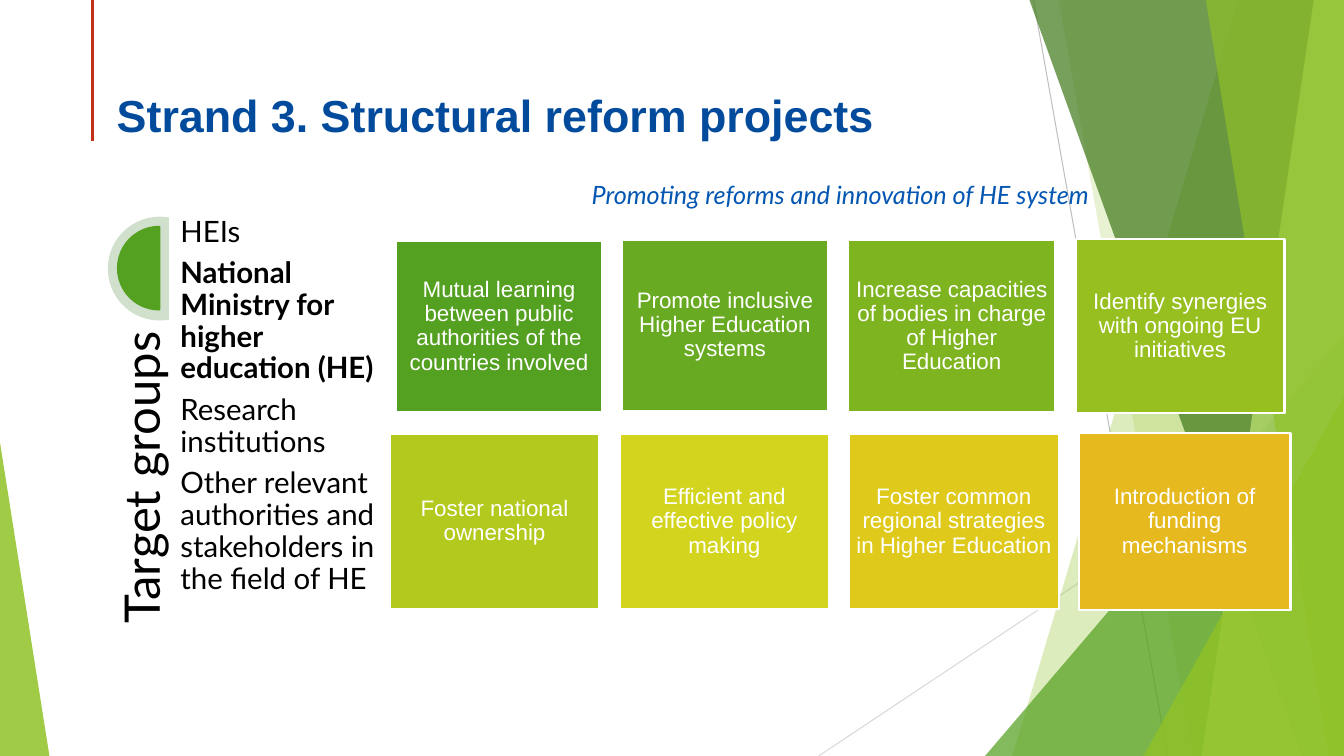
"""Build the slide on structural reform projects."""
from dataclasses import dataclass

from lxml import etree
from pptx import Presentation
from pptx.dml.color import RGBColor
from pptx.enum.shapes import MSO_CONNECTOR, MSO_SHAPE as Preset
from pptx.enum.text import MSO_ANCHOR as Anchor, PP_ALIGN as Align
from pptx.oxml.ns import qn
from pptx.util import Inches, Pt


@dataclass(frozen=True)
class Theme:
    """Colours, fonts and type sizes of the slide."""
    white: str = "FFFFFF"
    black: str = "000000"
    title: str = "024B9C"
    subtitle: str = "0356B1"
    accent: str = "C42F1A"
    lime: str = "90C226"
    green: str = "54A021"
    forest: str = "3F7819"
    pale_lime: str = "C0E474"
    halo: str = "D1DFCD"
    grey: str = "BFBFBF"
    light_grey: str = "D9D9D9"
    heading_font: str = "Arial"
    body_font: str = "Lato"
    title_size: int = 32
    label_size: int = 35
    list_size: int = 21
    subtitle_size: int = 18
    tile_size: int = 16


THEME = Theme()
WIDTH, HEIGHT = 13.33, 7.5

TILES = [
    ("Mutual learning between public authorities of the countries involved",
     "54A021", (3.93, 2.39, 2.04, 1.7)),
    ("Promote inclusive Higher Education systems",
     "68AA21", (6.17, 2.38, 2.04, 1.7)),
    ("Increase capacities of bodies in charge of Higher Education",
     "7EB420", (8.41, 2.38, 2.06, 1.71)),
    ("Identify synergies with ongoing EU initiatives",
     "97BF1F", (10.67, 2.37, 2.07, 1.73)),
    ("Foster national ownership",
     "B3C91E", (3.87, 4.31, 2.07, 1.73)),
    ("Efficient and effective policy making",
     "D2D41D", (6.15, 4.31, 2.07, 1.73)),
    ("Foster common regional strategies in Higher Education",
     "DFCA1C", (8.42, 4.31, 2.08, 1.73)),
    ("Introduction of funding mechanisms",
     "E6B91E", (10.7, 4.3, 2.1, 1.75)),
]

TARGET_GROUPS = [
    ("HEIs", False),
    ("National Ministry for higher education (HE)", True),
    ("Research institutions", False),
    ("Other relevant authorities and stakeholders in the field of HE", False),
]


def rgb(colour):
    """Turn a hex string into a colour."""
    return RGBColor.from_string(colour)


def paint(shape, fill, opacity=100, line=None):
    """Give a shape a flat fill, an optional outline and no shadow."""
    shape.shadow.inherit = False
    shape.fill.solid()
    shape.fill.fore_color.rgb = rgb(fill)
    if opacity < 100:
        colour = shape.fill._xPr.find(qn("a:solidFill"))[0]
        etree.SubElement(colour, qn("a:alpha")).set("val", str(opacity * 1000))
    if line:
        shape.line.color.rgb = rgb(line)
        shape.line.width = Pt(1.5)
    else:
        shape.line.fill.background()


def add_preset(slide, preset, box, fill, adjustments=(), **look):
    """Add a painted preset shape."""
    shape = slide.shapes.add_shape(preset, *map(Inches, box))
    for index, value in enumerate(adjustments):
        shape.adjustments[index] = value
    paint(shape, fill, **look)
    return shape


def add_facet(slide, top_left, bottom_left, fill, opacity):
    """Add a translucent facet reaching the right edge of the slide."""
    outline = slide.shapes.build_freeform(Inches(top_left), 0)
    corners = [(WIDTH, 0), (WIDTH, HEIGHT), (bottom_left, HEIGHT)]
    outline.add_line_segments([(Inches(x), Inches(y)) for x, y in corners])
    paint(outline.convert_to_shape(), fill, opacity)


def add_rule(slide, start, end, colour, width):
    """Add a straight line without a shadow."""
    rule = slide.shapes.add_connector(
        MSO_CONNECTOR.STRAIGHT, *map(Inches, (*start, *end)))
    rule.line.color.rgb = rgb(colour)
    rule.line.width = Pt(width)
    etree.SubElement(rule._element.spPr, qn("a:effectLst"))


def write(frame, text, *, size, colour, font, bold=False, italic=False,
          align=Align.LEFT, anchor=Anchor.TOP, insets=(0, 0, 0, 0),
          spacing=None, after=None, more=False):
    """Write one paragraph into a text frame, after the others if more."""
    frame.word_wrap = True
    frame.vertical_anchor = anchor
    (frame.margin_left, frame.margin_top,
     frame.margin_right, frame.margin_bottom) = map(Inches, insets)
    paragraph = frame.add_paragraph() if more else frame.paragraphs[0]
    paragraph.alignment = align
    if spacing:
        paragraph.line_spacing = spacing
    if after:
        paragraph.space_after = Pt(after)
    run = paragraph.add_run()
    run.text = text
    run.font.size = Pt(size)
    run.font.name = font
    run.font.bold = bold
    run.font.italic = italic
    run.font.color.rgb = rgb(colour)


def add_text_box(slide, box):
    """Add an empty text box."""
    return slide.shapes.add_textbox(*map(Inches, box))


def add_backdrop(slide):
    """Draw the faceted decoration and the rule beside the title."""
    add_rule(slide, (10.25, 0), (11.58, HEIGHT), THEME.grey, 0.75)
    add_rule(slide, (WIDTH, 4.03), (8.12, HEIGHT), THEME.light_grey, 0.75)
    add_facet(slide, 12.28, 10.04, THEME.lime, 30)
    add_facet(slide, 10.5, 11.83, THEME.lime, 20)
    add_preset(slide, Preset.ISOSCELES_TRIANGLE, (9.77, 3.33, 3.56, 4.17),
               THEME.green, [1], opacity=72)
    add_facet(slide, 10.21, 12.91, THEME.forest, 70)
    add_facet(slide, 13.03, 11.92, THEME.pale_lime, 70)
    add_facet(slide, 11.96, 13.18, THEME.lime, 65)
    add_preset(slide, Preset.ISOSCELES_TRIANGLE, (11.34, 3.93, 1.99, 3.57),
               THEME.lime, [1], opacity=80)
    add_preset(slide, Preset.ISOSCELES_TRIANGLE, (0, 4.39, 0.49, 3.11),
               THEME.lime, [0], opacity=85)
    add_rule(slide, (0.92, 0), (0.92, 1.4), THEME.accent, 2.25)


def add_target_groups(slide):
    """Draw the half disc, the upright label and the list of groups."""
    add_preset(slide, Preset.CHORD, (1.07, 2.15, 1.03, 1.03),
               THEME.halo, [48, 168])
    add_preset(slide, Preset.PIE, (1.17, 2.25, 0.82, 0.82),
               THEME.green, [54, 162], line=THEME.green)
    label = add_text_box(slide, (-0.11, 4.47, 2.98, 0.62))
    label.rotation = 270
    write(label.text_frame, "Target groups", size=THEME.label_size,
          colour=THEME.black, font=THEME.body_font, align=Align.RIGHT,
          anchor=Anchor.BOTTOM, spacing=0.9)
    groups = add_text_box(slide, (1.79, 2.15, 2.06, 4.12))
    for index, (group, bold) in enumerate(TARGET_GROUPS):
        write(groups.text_frame, group, size=THEME.list_size,
              colour=THEME.black, font=THEME.body_font, bold=bold,
              spacing=0.9, after=7, more=index > 0)


def add_headings(slide):
    """Write the title and the subtitle."""
    title = add_text_box(slide, (1.06, 0.54, 11.5, 0.86))
    write(title.text_frame, "Strand 3. Structural reform projects",
          size=THEME.title_size, colour=THEME.title, font=THEME.heading_font,
          bold=True, anchor=Anchor.BOTTOM, insets=(0.1, 0.05, 0.1, 0))
    subtitle = add_text_box(slide, (3.99, 1.73, 8.69, 0.4))
    write(subtitle.text_frame, "Promoting reforms and innovation of HE system",
          size=THEME.subtitle_size, colour=THEME.subtitle,
          font=THEME.body_font, italic=True, align=Align.CENTER,
          insets=(0.1, 0.05, 0.1, 0.05))


def add_tile(slide, text, fill, box):
    """Add one coloured tile with centred text."""
    tile = add_preset(slide, Preset.RECTANGLE, box, fill, line=THEME.white)
    write(tile.text_frame, text, size=THEME.tile_size, colour=THEME.white,
          font=THEME.heading_font, align=Align.CENTER, anchor=Anchor.MIDDLE,
          insets=(0.07,) * 4, spacing=0.9)


def main():
    """Assemble and save the slide."""
    deck = Presentation()
    deck.slide_width, deck.slide_height = Inches(WIDTH), Inches(HEIGHT)
    slide = deck.slides.add_slide(deck.slide_layouts[6])
    add_backdrop(slide)
    add_target_groups(slide)
    add_headings(slide)
    for text, fill, box in TILES:
        add_tile(slide, text, fill, box)
    deck.save("out.pptx")


if __name__ == "__main__":
    main()
